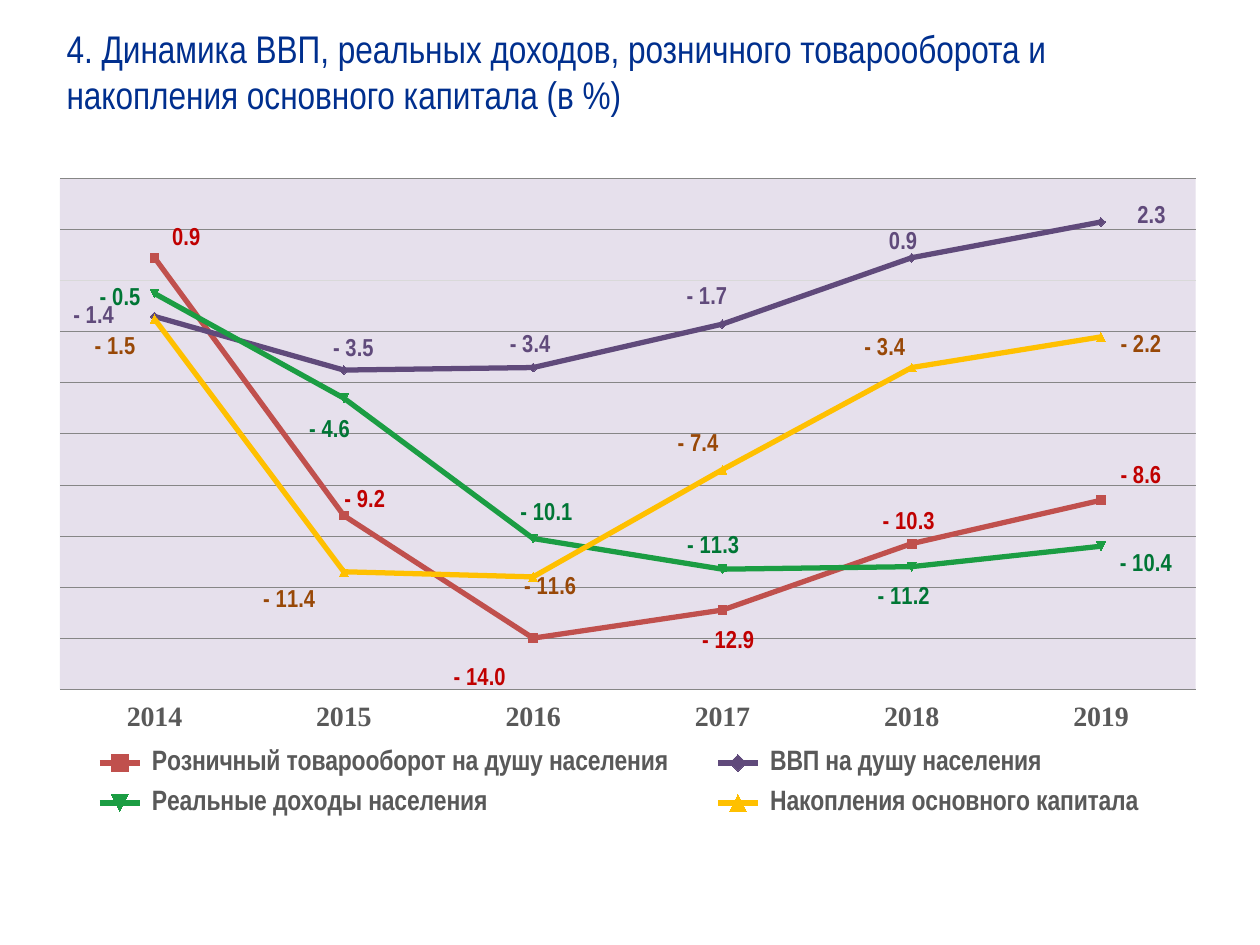
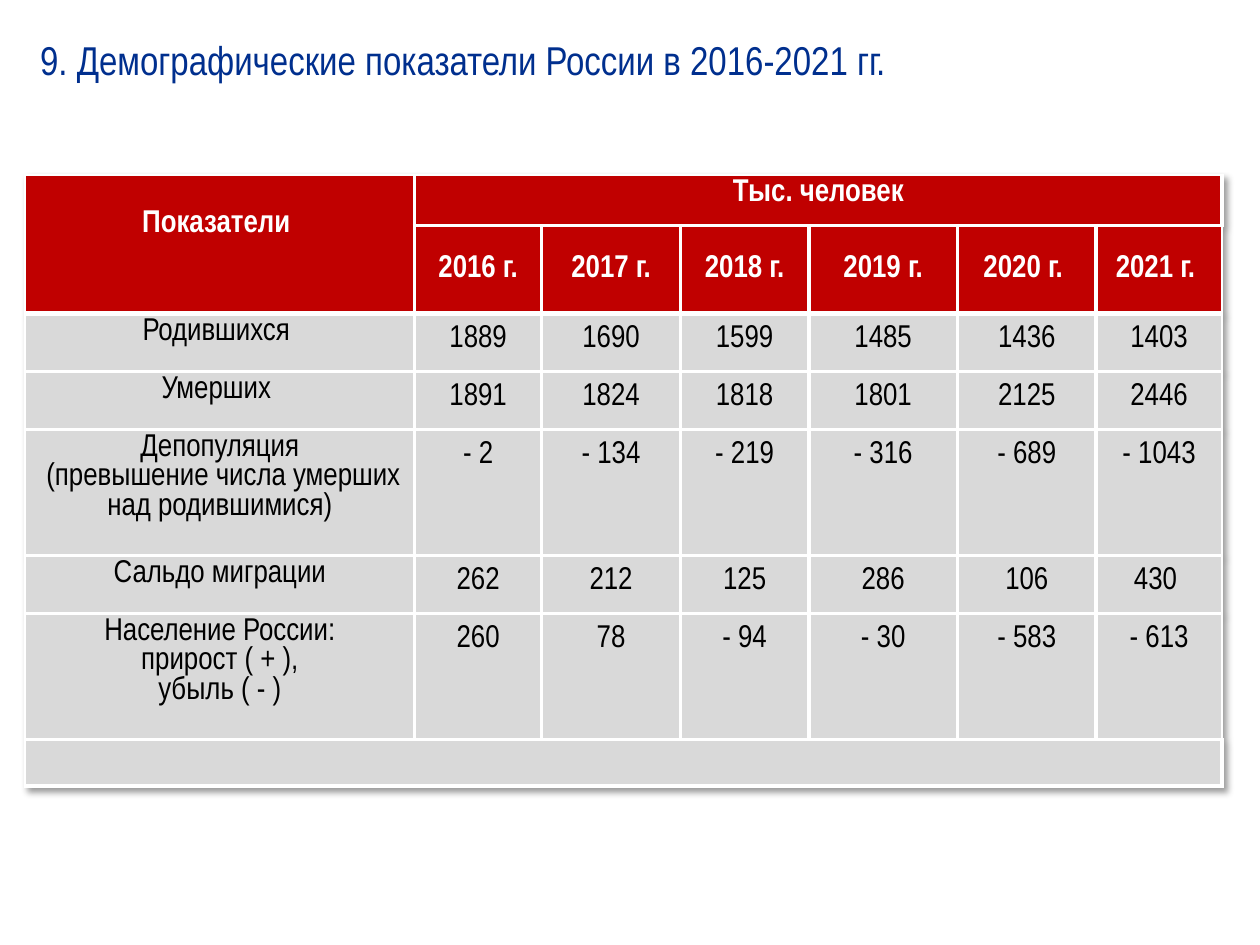
from pptx import Presentation
from pptx import util as u
from pptx.chart.data import CategoryChartData
from pptx.dml.color import RGBColor
from pptx.enum import chart as ch
from pptx.enum import text
from pptx.oxml import parse_xml
from pptx.oxml.ns import nsdecls, qn

COLORS = {
    "title": "002F8E", "grey": "595959", "axis": "D9D9D9", "grid": "868686",
    "plot": "E6E0EC", "header": "C00000", "body": "D9D9D9",
    "white": "FFFFFF", "black": "000000",
    "retail": "C0504D", "retail_label": "C00000",
    "gdp": "604A7B", "gdp_label": "604A7B",
    "income": "1B9D43", "income_label": "007635",
    "capital": "FFC000", "capital_label": "984807",
}
FONT = "Arial Narrow"
NUMBER = r'_-* #\ ##0.0_-;\-* #\ ##0.0_-;_-* "-"??_'

# Chart: key, name, values, label shifts in inches from the spot above each point
YEARS = range(2014, 2020)
SERIES = [
    ("retail", " Розничный товарооборот на душу населения ",
     (0.9, -9.2, -14, -12.9, -10.3, -8.6),
     ((0.23, 0.02), (0.19, 0.05), (-0.4, 0.49), (0.07, 0.42), (0, 0), (0.34, -0.02))),
    ("gdp", " ВВП на душу населения ",
     (-1.4, -3.5, -3.4, -1.7, 0.9, 2.3),
     ((-0.46, 0.17), (0.1, 0.01), (0, 0), (-0.1, -0.04), (-0.09, 0.05), (0.38, 0.13))),
    ("income", " Реальные доходы населения ",
     (-0.5, -4.6, -10.1, -11.3, -11.2, -10.4),
     ((-0.25, 0.21), (-0.09, 0.43), (0.13, -0.03), (-0.05, -0.01), (-0.04, 0.42), (0.38, 0.32))),
    ("capital", " Накопления основного капитала ",
     (-1.5, -11.4, -11.6, -7.4, -3.4, -2.2),
     ((-0.29, 0.4), (-0.41, 0.4), (0.16, 0.26), (-0.17, -0.03), (-0.19, 0.02), (0.34, 0.24))),
]
PLOT_ORDER = (1, 0, 2, 3)

# Table: two header rows, five indicators, one empty row
ROWS = [
    ["Показатели ", "Тыс. человек"],
    ["", "2016 г.", "2017 г.", "2018 г.", "2019 г.", "2020 г. ", "2021 г. "],
    ["Родившихся ", "1889", "1690", "1599", "1485", "1436", "1403"],
    ["Умерших ", "1891", "1824", "1818", "1801", "2125", "2446"],
    ["Депопуляция\n (превышение числа умерших над родившимися)",
     "- 2", "- 134", "- 219", "- 316", "- 689", "- 1043"],
    ["Сальдо миграции", "262", "212", "125", "286", "106", "430 "],
    ["Население России:\n прирост ( + ), \nубыль ( - )",
     "260", "78", "- 94", "- 30", "- 583", "- 613"],
    [],
]
MERGES = [((0, 0), (1, 0)), ((0, 1), (0, 6)), ((7, 0), (7, 6))]
COL_WIDTHS = (3.09, 1.01, 1.1, 1.02, 1.18, 1.1, 1)
ROW_HEIGHTS = (0.4, 0.7, 0.46, 0.46, 1, 0.46, 1, 0.37)


def rgb(name):
    return RGBColor.from_string(COLORS[name])


def manual_layout(x, y, w=None, h=None, target=""):
    """Fixed frame when a size is given, otherwise a label shift."""
    parts = f'<c:x val="{x:.4f}"/><c:y val="{y:.4f}"/>'
    if w:
        parts = (f'{target}<c:xMode val="edge"/><c:yMode val="edge"/>'
                 f'{parts}<c:w val="{w}"/><c:h val="{h}"/>')
    return parse_xml(f'<c:layout {nsdecls("c")}><c:manualLayout>{parts}'
                     '</c:manualLayout></c:layout>')


class Deck:
    def __init__(self):
        self.prs = Presentation()
        self.prs.slide_width, self.prs.slide_height = u.Inches(10), u.Inches(7.5)
        self.s = None

    def slide(self):
        self.s = self.prs.slides.add_slide(self.prs.slide_layouts[6])

    def font(self, font, size, color, bold=False, name=FONT):
        font.size, font.bold, font.name = u.Pt(size), bold, name
        font.color.rgb = rgb(color)

    def title(self, box, words, size, before=0, anchor=text.MSO_ANCHOR.TOP):
        sp = self.s.shapes.add_textbox(*map(u.Inches, box))
        tf = sp.text_frame
        tf.word_wrap, tf.vertical_anchor = True, anchor
        p = tf.paragraphs[0]
        p.space_before = u.Pt(before)
        r = p.add_run()
        r.text = words
        self.font(r.font, size, "title")

    # Line chart
    def line_chart(self, box, years, series):
        data = CategoryChartData(number_format=NUMBER)
        data.categories = [str(year) for year in years]
        for _, name, values, _ in series:
            data.add_series(name, values)
        chart = self.s.shapes.add_chart(
            ch.XL_CHART_TYPE.LINE_MARKERS, *map(u.Inches, box), data).chart
        chart.has_title = False
        self.font(chart.font, 10, "black", name="Calibri")
        self.legend(chart)
        self.axes(chart)
        self.plot_area(chart)
        lines = list(chart.plots[0].series)
        for ser, (key, _, _, shifts) in zip(lines, series):
            self.line(ser, key)
            self.labels(ser, key, shifts, box[2:])
        for ser, order in zip(lines, PLOT_ORDER):
            ser._element.find(qn("c:order")).set("val", str(order))

    def legend(self, chart):
        chart.has_legend = True
        legend = chart.legend
        legend.position = ch.XL_LEGEND_POSITION.BOTTOM
        legend.include_in_layout = False
        self.font(legend.font, 16, "grey", True)
        for old in legend._element.findall(qn("c:layout")):
            legend._element.remove(old)
        legend._element.find(qn("c:legendPos")).addnext(
            manual_layout(0.03, 0.84, 0.94, 0.14))

    def axes(self, chart):
        cat, val = chart.category_axis, chart.value_axis
        cat.tick_label_position = ch.XL_TICK_LABEL_POSITION.LOW
        cat.major_tick_mark = ch.XL_TICK_MARK.NONE
        cat.format.line.color.rgb = rgb("axis")
        cat.format.line.width = u.Pt(0.75)
        self.font(cat.tick_labels.font, 16, "grey", True, "Times New Roman")
        val.visible = False
        val.minimum_scale, val.maximum_scale, val.major_unit = -16, 4, 2
        val.has_major_gridlines = True
        val.major_gridlines.format.line.color.rgb = rgb("grid")
        val.major_gridlines.format.line.width = u.Pt(0.5)

    def plot_area(self, chart):
        area = chart.plots[0]._element.getparent()
        for old in area.findall(qn("c:layout")):
            area.remove(old)
        area.insert(0, manual_layout(0.025, 0.02, 0.959, 0.752,
                                     '<c:layoutTarget val="inner"/>'))
        area.append(parse_xml(
            f'<c:spPr {nsdecls("c", "a")}><a:solidFill><a:srgbClr val="{COLORS["plot"]}"/>'
            '</a:solidFill><a:ln><a:noFill/></a:ln></c:spPr>'))

    def line(self, ser, key):
        ser.smooth = False
        ser.format.line.color.rgb = rgb(key)
        ser.format.line.width = u.Pt(3)
        ser.marker.style, ser.marker.size = ch.XL_MARKER_STYLE.AUTOMATIC, 5
        ser.marker.format.fill.solid()
        ser.marker.format.fill.fore_color.rgb = rgb(key)
        ser.marker.format.line.color.rgb = rgb(key)

    def labels(self, ser, key, shifts, size):
        labels = ser.data_labels
        labels.show_value = True
        labels.position = ch.XL_LABEL_POSITION.ABOVE
        labels.number_format, labels.number_format_is_linked = NUMBER, False
        self.font(labels.font, 14, key + "_label", True)
        for leader in labels._element.findall(qn("c:showLeaderLines")):
            leader.set("val", "0")
        moved = [(i, shift) for i, shift in enumerate(shifts) if any(shift)]
        for i, _ in moved:
            label = ser.points[i].data_label
            self.font(label.font, 14, key + "_label", True)
            label.position = ch.XL_LABEL_POSITION.ABOVE
        for d, (_, (dx, dy)) in zip(labels._element.findall(qn("c:dLbl")), moved):
            d.find(qn("c:idx")).addnext(manual_layout(dx / size[0], dy / size[1]))
            for tag in ("c:spPr", "c:txPr"):
                for part in d.findall(qn(tag)):
                    d.remove(part)

    # Table
    def table(self, left, top, rows, widths, heights, merges):
        box = (left, top, sum(widths), sum(heights))
        tbl = self.s.shapes.add_table(
            len(heights), len(widths), *map(u.Inches, box)).table
        tbl.first_row = tbl.horz_banding = False
        tbl._tbl.tblPr.insert(0, parse_xml(
            f'<a:effectLst {nsdecls("a")}><a:outerShdw blurRad="50800" dist="38100" '
            'dir="2700000" algn="tl"><a:srgbClr val="000000"><a:alpha val="40000"/>'
            '</a:srgbClr></a:outerShdw></a:effectLst>'))
        for col, width in zip(tbl.columns, widths):
            col.width = u.Inches(width)
        for row, height in zip(tbl.rows, heights):
            row.height = u.Inches(height)
        for first, last in merges:
            tbl.cell(*first).merge(tbl.cell(*last))
        for i in range(len(heights)):
            for j in range(len(widths)):
                cell = tbl.cell(i, j)
                self.borders(cell, {
                    "L": 2.25 if j else 1,
                    "R": 2.25 if j < len(widths) - 1 else 1,
                    "T": 3 if i == 2 else 2.25 if i else 1,
                    "B": 3 if i == 1 or (i, j) == (0, 0) else 2.25})
                self.cell(cell, i, j, rows[i][j] if j < len(rows[i]) else "")

    def borders(self, cell, sides):
        tc_pr = cell._tc.get_or_add_tcPr()
        for side, width in sides.items():
            tc_pr.append(parse_xml(
                f'<a:ln{side} {nsdecls("a")} w="{u.Pt(width)}"><a:solidFill>'
                f'<a:srgbClr val="{COLORS["white"]}"/></a:solidFill></a:ln{side}>'))

    def cell(self, cell, i, j, words):
        header, single = i < 2, j == 0 or i < 2
        cell.fill.solid()
        cell.fill.fore_color.rgb = rgb("header" if header else "body")
        cell.margin_bottom = 0
        top = 0.27 if (i, j) == (0, 0) else 0.03 if single else 0.05
        cell.margin_top = u.Inches(top if words and i != 1 else 0)
        if i == 1:
            cell.vertical_anchor = text.MSO_ANCHOR.MIDDLE
        if not words:
            return
        tf = cell.text_frame
        for n, line in enumerate(words.split("\n")):
            p = tf.add_paragraph() if n else tf.paragraphs[0]
            p.alignment = text.PP_ALIGN.CENTER
            p.line_spacing = 1.0 if single else 1.15
            r = p.add_run()
            r.text = line
            self.font(r.font, 18, "white" if header else "black", header)


def main():
    deck = Deck()

    # Economic dynamics
    deck.slide()
    deck.line_chart((0.24, 1.31, 9.4, 5.39), YEARS, SERIES)
    deck.title((0.43, 0.15, 9.18, 0.84),
               "4. Динамика ВВП, реальных доходов, розничного товарооборота "
               "и накопления основного капитала (в %)", 22, before=6)

    # Demographic indicators
    deck.slide()
    deck.title((0.22, 0.19, 9.46, 0.57),
               "9. Демографические показатели России в 2016-2021 гг.", 23,
               anchor=text.MSO_ANCHOR.MIDDLE)
    deck.table(0.2, 1.39, ROWS, COL_WIDTHS, ROW_HEIGHTS, MERGES)

    deck.prs.save("out.pptx")


if __name__ == "__main__":
    main()
